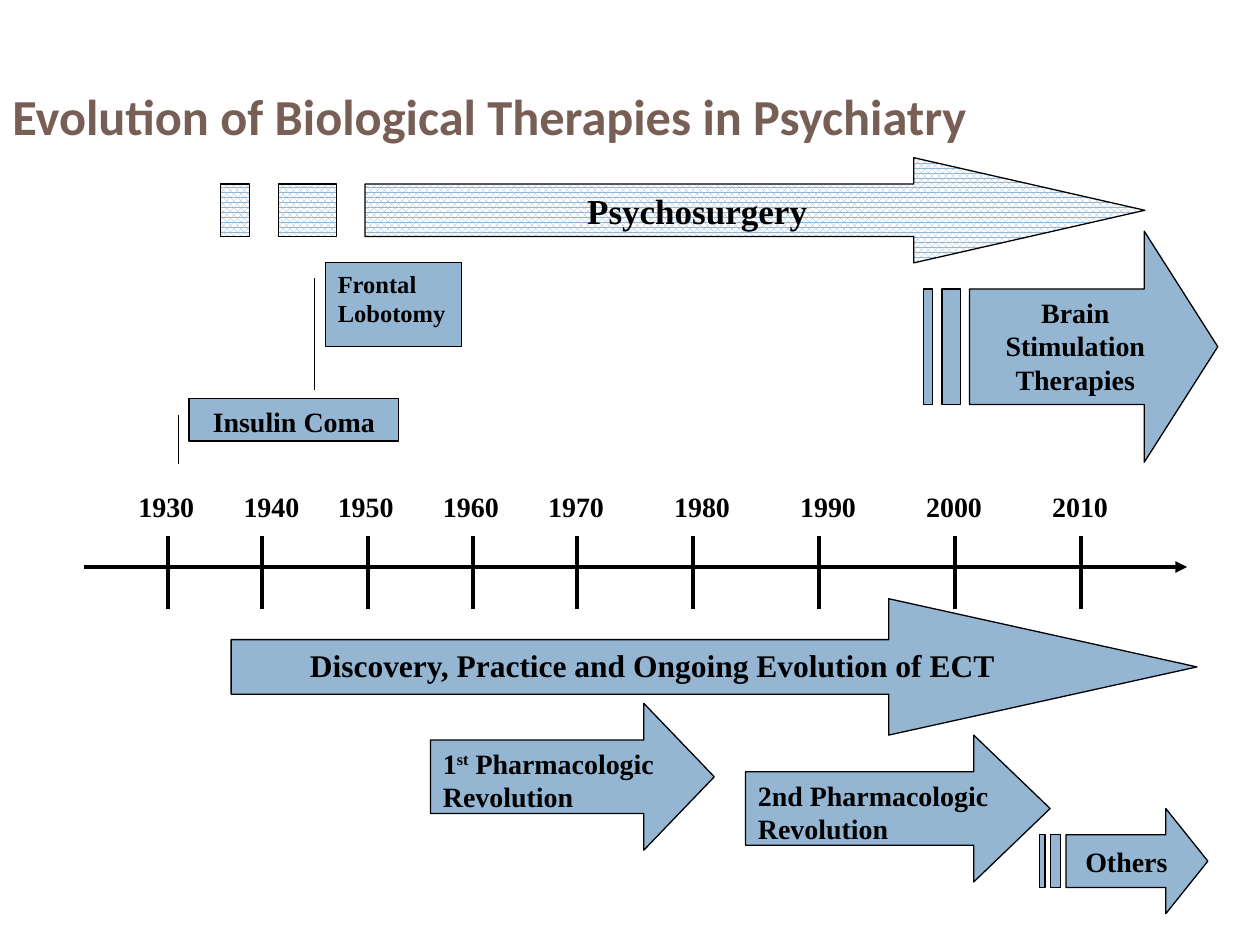
"""Build a timeline slide on the evolution of biological therapies in psychiatry."""
from lxml import etree
from pptx import Presentation
from pptx.dml.color import RGBColor
from pptx.enum import dml, shapes, text
from pptx.oxml import ns
from pptx.util import Cm, Pt

BLACK = RGBColor(0x00, 0x00, 0x00)
WHITE = RGBColor(0xFF, 0xFF, 0xFF)
BLUE = RGBColor(0x94, 0xB6, 0xD2)
BROWN = RGBColor(0x77, 0x5F, 0x55)
SERIF = "Times New Roman"
LEFT, CENTER = text.PP_ALIGN.LEFT, text.PP_ALIGN.CENTER
TOP, MIDDLE = text.MSO_ANCHOR.TOP, text.MSO_ANCHOR.MIDDLE
ARROW = shapes.MSO_SHAPE.RIGHT_ARROW
CALLOUT = shapes.MSO_SHAPE.LINE_CALLOUT_1

TITLE = "Evolution of Biological Therapies in Psychiatry"
AXIS_START, AXIS_END, AXIS_Y = 1.7, 23.93, 11.43
TICK_TOP, TICK_BOTTOM = 10.8, 12.28
YEARS = [
    ("1930", 3.39, 2.54), ("1940", 5.29, 4.66), ("1950", 7.41, 6.56),
    ("1960", 9.53, 8.68), ("1970", 11.64, 10.8), ("1980", 13.97, 13.34),
    ("1990", 16.51, 15.88), ("2000", 19.26, 18.42), ("2010", 21.8, 20.96),
]
PRESETS = [
    (ARROW, (4.66, 12.07, 19.47, 2.75), (0.4, 2.26),
     ["Discovery, Practice and Ongoing Evolution of ECT"], 18, CENTER),
    (ARROW, (15.03, 14.82, 6.14, 2.96), (0.5, 0.52),
     ["2nd Pharmacologic Revolution"], 16, LEFT),
    (ARROW, (8.68, 14.18, 5.72, 2.96), (0.5, 0.48),
     ["1", "st", " Pharmacologic Revolution"], 16, LEFT),
    (CALLOUT, (6.56, 5.29, 2.75, 1.69), (0.19, -0.08, 1.52, -0.08),
     ["Frontal Lobotomy"], 14, LEFT),
    (CALLOUT, (3.81, 8.04, 4.23, 0.85), (0.38, -0.05, 1.55, -0.05),
     ["Insulin Coma"], 16, CENTER),
]
STRIPED_ARROWS = [
    ((18.62, 4.66, 5.93, 4.66), "Brain Stimulation Therapies", 16, TOP, False),
    ((20.96, 16.3, 3.39, 2.12), "Others", 16, MIDDLE, False),
    ((4.45, 3.18, 18.63, 2.12), "Psychosurgery", 20, MIDDLE, True),
]
STRIPES = [(2 / 32, 4 / 32), (0, 1 / 32)]
BODY_START, HEAD_START = 5 / 32, 3 / 4


def write(shape, parts, size, align=LEFT, anchor=TOP, font=SERIF, color=BLACK):
    frame = shape.text_frame
    frame.word_wrap = True
    frame.vertical_anchor = anchor
    paragraph = frame.paragraphs[0]
    paragraph.alignment = align
    for part in parts:
        run = paragraph.add_run()
        run.text = part
        run.font.name = font
        run.font.size = Pt(size)
        run.font.bold = True
        run.font.color.rgb = color
        if part == "st":
            run._r.get_or_add_rPr().set("baseline", "30000")


def add_text(slide, box, *args, **style):
    write(slide.shapes.add_textbox(*map(Cm, box)), *args, **style)


def paint(shape, patterned=False):
    shape.shadow.inherit = False
    if patterned:
        shape.fill.patterned()
        shape.fill.pattern = dml.MSO_PATTERN.PERCENT_75
        shape.fill.fore_color.rgb = BLUE
        shape.fill.back_color.rgb = WHITE
    else:
        shape.fill.solid()
        shape.fill.fore_color.rgb = BLUE
    shape.line.color.rgb = BLACK
    shape.line.width = Pt(0.75)


def add_line(slide, x1, y1, x2, y2, arrow=False):
    line = slide.shapes.add_connector(
        shapes.MSO_CONNECTOR.STRAIGHT, Cm(x1), Cm(y1), Cm(x2), Cm(y2))
    line.line.color.rgb = BLACK
    line.line.width = Pt(2.25)
    if arrow:
        outline = line.line._get_or_add_ln()
        etree.SubElement(outline, ns.qn("a:tailEnd"), type="triangle")
    etree.SubElement(line._element.spPr, ns.qn("a:effectLst"))


def add_striped_arrow(slide, box, label, size, anchor, patterned):
    left, top, width, height = box

    def points(fractions):
        return [(Cm(left + x * width), Cm(top + y * height)) for x, y in fractions]

    outlines = [points([
        (HEAD_START, 0), (HEAD_START, 0.25), (BODY_START, 0.25), (BODY_START, 0.75),
        (HEAD_START, 0.75), (HEAD_START, 1), (1, 0.5)])]
    for start, end in STRIPES:
        outlines.append(points([(start, 0.25), (start, 0.75), (end, 0.75), (end, 0.25)]))
    builder = slide.shapes.build_freeform(*outlines[0][0])
    for index, outline in enumerate(outlines):
        if index:
            builder.move_to(*outline[0])
        builder.add_line_segments(outline[1:], close=True)
    shape = builder.convert_to_shape()
    paint(shape, patterned)
    frame = shape.text_frame
    frame.margin_left = Cm(BODY_START * width + 0.25)
    frame.margin_right = Cm((1 - HEAD_START) / 2 * width + 0.25)
    frame.margin_top = frame.margin_bottom = Cm(height / 4 + 0.13)
    write(shape, [label], size, CENTER, anchor)


def main():
    presentation = Presentation()
    presentation.slide_width, presentation.slide_height = Cm(25.4), Cm(19.05)
    slide = presentation.slides.add_slide(presentation.slide_layouts[6])

    add_text(slide, (0, 1.27, 24.13, 2.12), [TITLE], 28.8,
             anchor=MIDDLE, font="Calibri", color=BROWN)
    add_line(slide, AXIS_START, AXIS_Y, AXIS_END, AXIS_Y, arrow=True)
    for year, tick, left in YEARS:
        add_line(slide, tick, TICK_TOP, tick, TICK_BOTTOM)
        add_text(slide, (left, 9.74, 1.7, 0.94), [year], 16)
    for kind, box, adjustments, parts, size, align in PRESETS:
        shape = slide.shapes.add_shape(kind, *map(Cm, box))
        for index, value in enumerate(adjustments):
            shape.adjustments[index] = value
        paint(shape)
        write(shape, parts, size, align)
    for arrow in STRIPED_ARROWS:
        add_striped_arrow(slide, *arrow)

    presentation.save("out.pptx")


if __name__ == "__main__":
    main()
